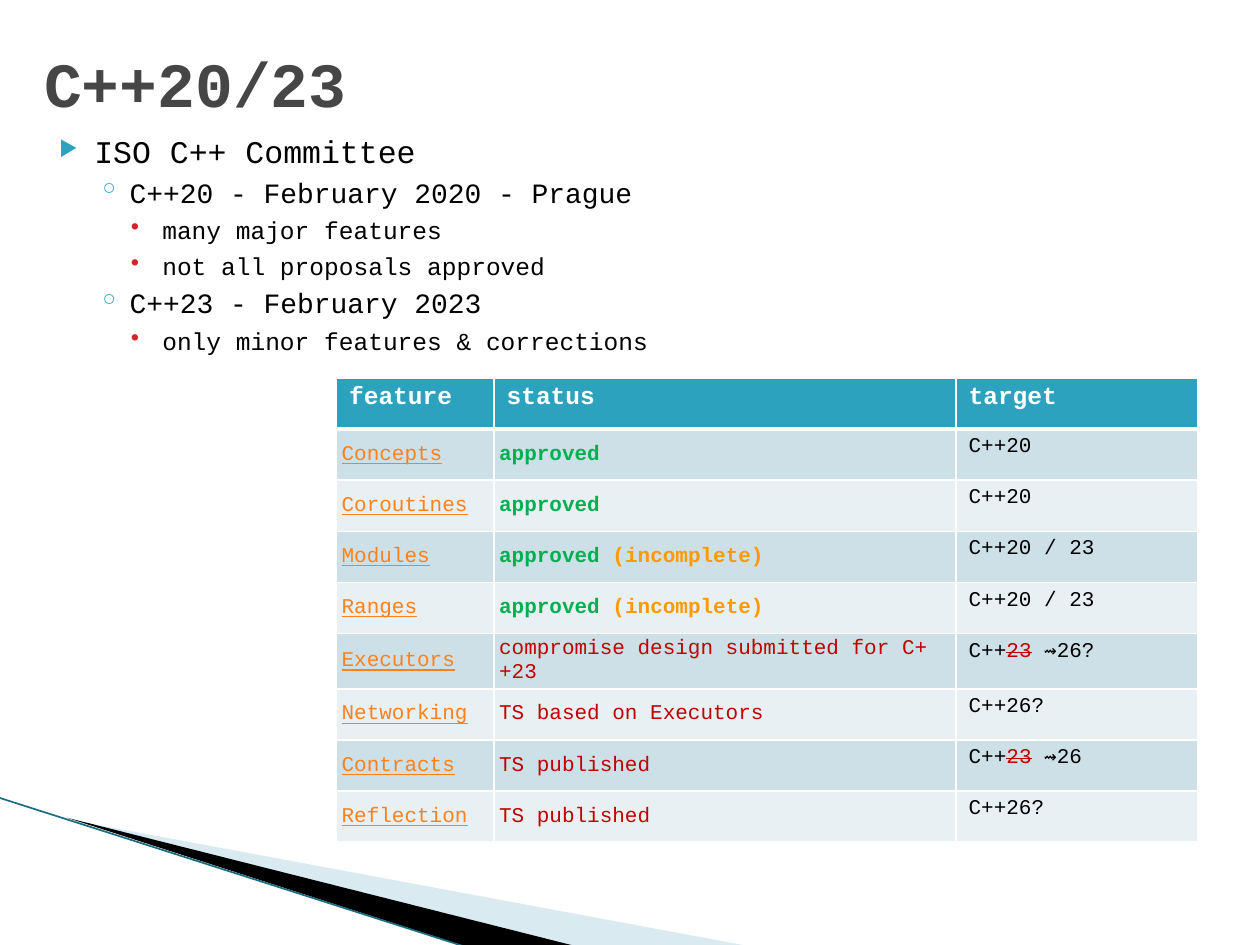
from lxml import etree
from pptx import Presentation
from pptx.dml.color import RGBColor
from pptx.enum import shapes, text
from pptx.oxml import ns
from pptx.util import Pt

FONT = "Courier New"
BLACK, WHITE, TEAL = "000000", "FFFFFF", "2DA2BF"
GREEN, AMBER, RED, ORANGE = "00B050", "FF9900", "C00000", "FF8119"
BANDS = ("E8F0F4", "CDE0E8")

LEVELS = (
    dict(left=28.8, hang=20, before=4, size=18, mark="▶", color=TEAL, scale=68),
    dict(left=49, hang=18, before=3.2, size=16, mark="◦", color=TEAL, scale=100),
    dict(left=67.7, hang=18, before=3.5, size=14, mark="•", color="DA1F28", scale=100),
)
OUTLINE = (
    (0, "ISO C++ Committee"),
    (1, "C++20 - February 2020 - Prague"),
    (2, "many major features"),
    (2, "not all proposals approved"),
    (1, "C++23 - February 2023"),
    (2, "only minor features & corrections"),
)

APPROVED = [("approved", GREEN, "bold")]
INCOMPLETE = [("approved ", GREEN, "bold"), ("(incomplete)", AMBER, "bold")]
PUBLISHED = [("TS published", RED, "")]


def target(label):
    return [(label, BLACK, "")]


def postponed(label):
    return [("C++", BLACK, ""), ("23", RED, "strike"), (" ⇝" + label, BLACK, "")]


FEATURES = (
    ("Concepts", APPROVED, target("C++20")),
    ("Coroutines", APPROVED, target("C++20")),
    ("Modules", INCOMPLETE, target("C++20 / 23")),
    ("Ranges", INCOMPLETE, target("C++20 / 23")),
    ("Executors", [("compromise design submitted for C++23", RED, "")], postponed("26?")),
    ("Networking", [("TS based on Executors", RED, "")], target("C++26?")),
    ("Contracts", PUBLISHED, postponed("26")),
    ("Reflection", PUBLISHED, target("C++26?")),
)


def rgb(value):
    return RGBColor.from_string(value)


def child(parent, tag, **attributes):
    return etree.SubElement(parent, ns.qn(tag), attributes)


def style(font, size, color, bold=False):
    font.name, font.size, font.bold = FONT, Pt(size), bold
    font.color.rgb = rgb(color)


def add_wedge(page, points, color, opacity=100):
    corners = [(Pt(x), Pt(y)) for x, y in points]
    builder = page.shapes.build_freeform(*corners[0], scale=1.0)
    builder.add_line_segments(corners[1:], close=True)
    wedge = builder.convert_to_shape()
    wedge.shadow.inherit = False
    wedge.line.fill.background()
    wedge.fill.solid()
    wedge.fill.fore_color.rgb = rgb(color)
    if opacity < 100:
        swatch = wedge.fill._xPr.find(".//" + ns.qn("a:srgbClr"))
        child(swatch, "a:alpha", val=str(opacity * 1000))


def add_line(page, start, end, color, width):
    ends = [Pt(value) for value in (*start, *end)]
    line = page.shapes.add_connector(shapes.MSO_CONNECTOR.STRAIGHT, *ends)
    line.line.color.rgb = rgb(color)
    line.line.width = Pt(width)
    child(line._element.spPr, "a:effectLst")


def set_title(page, label):
    title = page.shapes.title
    title.left, title.top, title.width, title.height = Pt(18), Pt(21.6), Pt(690), Pt(50.4)
    title.text_frame.text = label
    title.text_frame.vertical_anchor = text.MSO_ANCHOR.MIDDLE
    para = title.text_frame.paragraphs[0]
    para.alignment = text.PP_ALIGN.LEFT
    style(para.font, 36, "464646", True)


def add_outline(page, items):
    box = page.shapes.add_textbox(Pt(18), Pt(72), Pt(690), Pt(456))
    frame = box.text_frame
    frame.word_wrap = True
    for index, (depth, label) in enumerate(items):
        level = LEVELS[depth]
        para = frame.add_paragraph() if index else frame.paragraphs[0]
        para.text = label
        para.level = depth
        properties = para._p.get_or_add_pPr()
        properties.set("marL", str(Pt(level["left"])))
        properties.set("indent", str(-Pt(level["hang"])))
        child(child(properties, "a:buClr"), "a:srgbClr", val=level["color"])
        child(properties, "a:buSzPct", val=str(level["scale"] * 1000))
        child(properties, "a:buChar", char=level["mark"])
        if index:
            para.space_before = Pt(level["before"])
        style(para.font, level["size"], BLACK)


def set_borders(cell, top, bottom):
    properties = cell._tc.get_or_add_tcPr()
    for side, width in (("L", 1), ("R", 1), ("T", top), ("B", bottom)):
        border = child(properties, "a:ln" + side, w=str(Pt(width)))
        child(child(border, "a:solidFill"), "a:srgbClr", val=WHITE)


def fill_cell(cell, spans, size, color, top, bottom):
    set_borders(cell, top, bottom)
    cell.fill.solid()
    cell.fill.fore_color.rgb = rgb(color)
    para = cell.text_frame.paragraphs[0]
    for label, ink, effect in spans:
        span = para.add_run()
        span.text = label
        style(span.font, size, ink, effect == "bold")
        if effect == "underline":
            span.font.underline = True
        if effect == "strike":
            span.font._element.set("strike", "sngStrike")


def tighten(cell):
    cell.vertical_anchor = text.MSO_ANCHOR.MIDDLE
    cell.margin_left = cell.margin_right = Pt(2.9)
    cell.margin_top = cell.margin_bottom = Pt(1.44)


def add_features(page):
    rows = len(FEATURES) + 1
    table = page.shapes.add_table(rows, 3, Pt(192.3), Pt(216), Pt(492), Pt(29.2 * rows)).table
    table.first_row = table.horz_banding = False
    for column, width in zip(table.columns, (90, 264, 138)):
        column.width = Pt(width)
    for column, label in enumerate(("feature", "status", "target")):
        fill_cell(table.cell(0, column), [(label, WHITE, "bold")], 14, TEAL, 1, 3)
    for row, (name, status, goal) in enumerate(FEATURES, 1):
        for column, spans in enumerate(([(name, ORANGE, "underline")], status, goal)):
            cell = table.cell(row, column)
            fill_cell(cell, spans, 12, BANDS[row % 2], 3 if row == 1 else 1, 1)
            if column < 2:
                tighten(cell)


def main():
    deck = Presentation()
    deck.slide_width, deck.slide_height = Pt(720), Pt(540)
    page = deck.slides.add_slide(deck.slide_layouts[5])
    add_wedge(page, ((39.6, 468.4), (428.4, 540.7), (328.3, 540.7)), "A0CBDC", 40)
    add_wedge(page, ((38.2, 467.3), (329, 540.7), (267.8, 541.4)), BLACK)
    add_line(page, (-0.7, 455.8), (267.1, 541.4), "1B6C80", 0.95)
    set_title(page, "C++20/23")
    add_outline(page, OUTLINE)
    add_features(page)
    deck.save("out.pptx")


if __name__ == "__main__":
    main()
